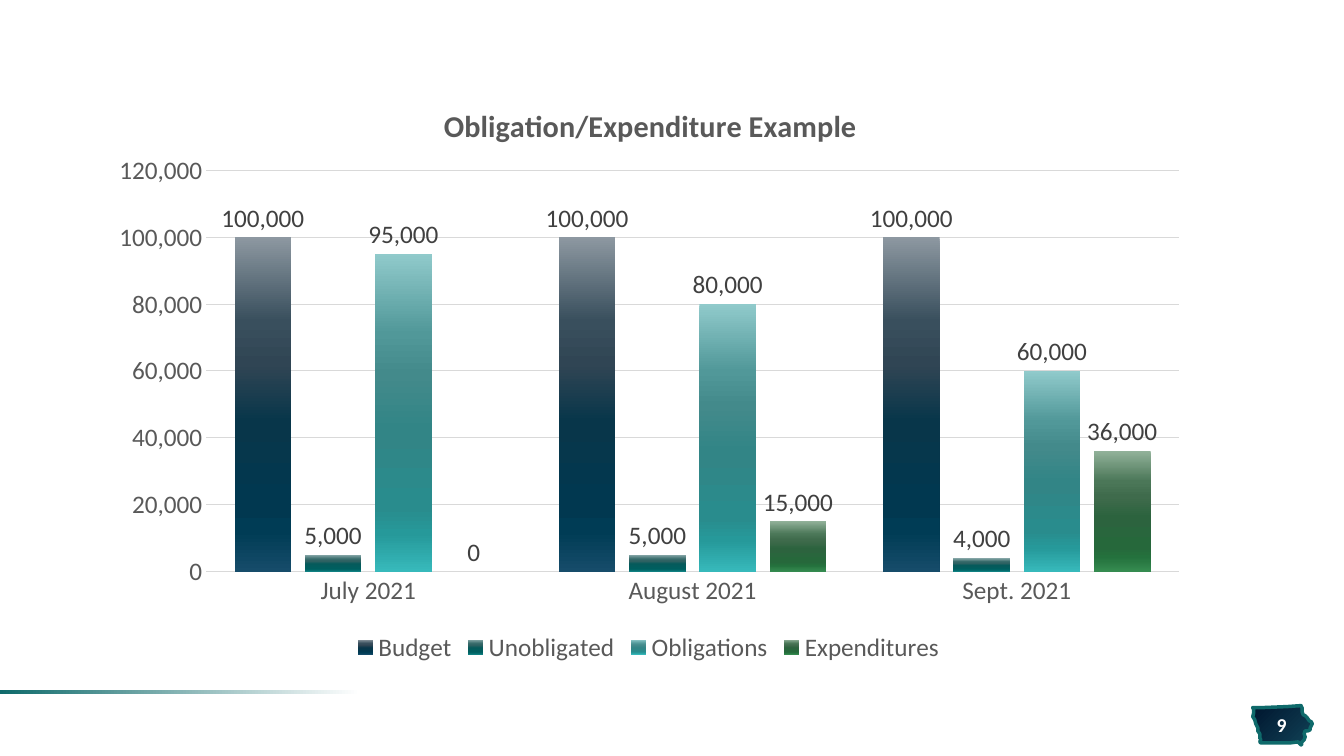
import pptx
import pptx.chart.data
import pptx.dml.color
import pptx.enum.chart
import pptx.enum.shapes
import pptx.enum.text
import pptx.oxml
import pptx.oxml.ns
import pptx.util
from lxml import etree

Cm, Pt = pptx.util.Cm, pptx.util.Pt
qn = pptx.oxml.ns.qn

FONT = "Calibri"
TITLE = "Obligation/Expenditure Example"
MONTHS = ["July 2021", "August 2021", "Sept. 2021"]
STOP_POSITIONS = (0, 25, 38, 55, 80, 88, 100)
SERIES = [
    ("Budget", (100000, 100000, 100000),
     "8D98A1 394F5D 304554 08364A 013850 003C55 164C6A"),
    ("Unobligated", (5000, 5000, 4000),
     "8BAAAB 396C6C 2E6162 055A5B 005E5F 006364 108182"),
    ("Obligations", (95000, 80000, 60000),
     "90CACB 519899 438A8B 328586 298C8D 26999A 37B9BB"),
    ("Expenditures", (0, 15000, 36000),
     "91B199 4B7758 3F6B4C 2C633E 26683B 24713D 358B50"),
]
PAGE_NUMBER = "9"
TEAL, AXIS_TEXT, LABEL_TEXT, GRID = "0F6A6B", "595959", "404040", "D9D9D9"

# State outline, in hundredths of an inch from its top left corner
STATE_LEFT, STATE_TOP = Cm(31.57), Cm(17.78)
STATE_OUTLINE = [
    (48, 0), (34, 1), (10, 2), (0, 2), (1, 4), (1, 7), (0, 11), (2, 14),
    (3, 18), (5, 22), (5, 25), (7, 28), (7, 32), (8, 34), (7, 36), (8, 37),
    (37, 37), (45, 36), (48, 39), (49, 38), (48, 37), (51, 34), (52, 31),
    (51, 28), (52, 25), (55, 25), (57, 24), (57, 22), (59, 18), (58, 16),
    (56, 15), (54, 12), (52, 10), (50, 9), (49, 6), (49, 2), (48, 1),
]


def rgb(value):
    return pptx.dml.color.RGBColor.from_string(value)


def style_font(font, size=18, color=AXIS_TEXT, bold=False):
    font.name, font.size, font.bold = FONT, Pt(size), bold
    font.color.rgb = rgb(color)


def put_text(frame, text, align=pptx.enum.text.PP_ALIGN.CENTER, spacing=None, **look):
    paragraph = frame.paragraphs[0]
    paragraph.alignment = align
    run = paragraph.add_run()
    run.text = text
    style_font(run.font, **look)
    if spacing:
        run.font._element.set("spc", str(round(spacing * 100)))


def fill_gradient(fill, element, stops, angle):
    """Fill with (percent, colour) stops; angle runs clockwise in degrees."""
    fill.gradient()
    gradient = element.find(".//" + qn("a:gradFill"))
    stop_list = gradient.find(qn("a:gsLst"))
    for stop in list(stop_list):
        stop_list.remove(stop)
    for percent, color in stops:
        stop = etree.SubElement(stop_list, qn("a:gs"), pos=str(percent * 1000))
        etree.SubElement(stop, qn("a:srgbClr"), val=color)
    gradient.find(qn("a:lin")).set("ang", str(angle * 60000))


def place(part, before, inner=False, **fractions):
    """Lay a chart part out by fractions of the chart, ahead of the first of the given tags."""
    for old in part.findall(qn("c:layout")):
        part.remove(old)
    layout = etree.Element(qn("c:layout"))
    manual = etree.SubElement(layout, qn("c:manualLayout"))
    if inner:
        etree.SubElement(manual, qn("c:layoutTarget"), val="inner")
    for key in ("x", "y"):
        etree.SubElement(manual, qn(f"c:{key}Mode"), val="edge")
    for key, value in fractions.items():
        etree.SubElement(manual, qn(f"c:{key}"), val=str(value))
    next(child for child in part if child.tag in map(qn, before)).addprevious(layout)


def add_state(slide):
    builder = slide.shapes.build_freeform(*STATE_OUTLINE[0], scale=Cm(2.54) / 100)
    builder.add_line_segments(STATE_OUTLINE[1:], close=True)
    state = builder.convert_to_shape(STATE_LEFT, STATE_TOP)
    state.shadow.inherit = False
    fill_gradient(state.fill, state._element, [(0, "00162E"), (100, "114257")], 45)
    state.line.color.rgb = rgb(TEAL)
    state.line.width = Pt(2.5)


def add_footer_rule(slide):
    rule = slide.shapes.add_shape(pptx.enum.shapes.MSO_SHAPE.RECTANGLE,
                                  0, Cm(17.4), Cm(9.65), Cm(0.08))
    rule.shadow.inherit = False
    rule.line.fill.background()
    fill_gradient(rule.fill, rule._element, [(6, "FFFFFF"), (100, TEAL)], 180)


def add_page_number(slide):
    frame = slide.shapes.add_textbox(Cm(31.65), Cm(17.98), Cm(1.3), Cm(0.58)).text_frame
    frame.word_wrap = True
    frame.margin_left = frame.margin_right = 0
    frame.vertical_anchor = pptx.enum.text.MSO_ANCHOR.MIDDLE
    put_text(frame, PAGE_NUMBER, size=14, color="FFFFFF", bold=True, spacing=0.5)


def style_axes(chart):
    months, amounts = chart.category_axis, chart.value_axis
    for axis in (months, amounts):
        axis.major_tick_mark = axis.minor_tick_mark = pptx.enum.chart.XL_TICK_MARK.NONE
        style_font(axis.tick_labels.font)
    months.format.line.color.rgb = rgb(GRID)
    months.format.line.width = Pt(1)
    amounts.format.line.fill.background()
    amounts.minimum_scale, amounts.maximum_scale, amounts.major_unit = 0, 120000, 20000
    amounts.tick_labels.number_format = "#,##0"
    amounts.tick_labels.number_format_is_linked = False
    amounts.major_gridlines.format.line.color.rgb = rgb(GRID)
    amounts.major_gridlines.format.line.width = Pt(0.75)


def add_obligation_chart(slide):
    budget_data = pptx.chart.data.CategoryChartData(number_format="#,##0")
    budget_data.categories = MONTHS
    for name, values, _ in SERIES:
        budget_data.add_series(name, values)
    chart = slide.shapes.add_chart(
        pptx.enum.chart.XL_CHART_TYPE.COLUMN_CLUSTERED,
        Cm(2.41), Cm(1.73), Cm(27.86), Cm(15.09), budget_data).chart
    style_font(chart.font, color="000000")

    put_text(chart.chart_title.text_frame, TITLE, size=21.6, bold=True)
    chart.chart_title.include_in_layout = False
    place(chart.chart_title._element, ["c:overlay"], x=0.31, y=0.05)
    plot_area = chart._chartSpace.find(".//" + qn("c:plotArea"))
    place(plot_area, ["c:barChart"], inner=True, x=0.1, y=0.17, w=0.88, h=0.67)

    chart.has_legend = True
    chart.legend.position = pptx.enum.chart.XL_LEGEND_POSITION.BOTTOM
    chart.legend.include_in_layout = False
    style_font(chart.legend.font)
    style_axes(chart)

    plot = chart.plots[0]
    plot.vary_by_categories = False
    plot.gap_width, plot.overlap = 100, -24
    for series, (_, _, colors) in zip(plot.series, SERIES):
        fill_gradient(series.format.fill, series._element,
                      zip(STOP_POSITIONS, colors.split()), 90)
        labels = series.data_labels
        labels.show_value = True
        labels.position = pptx.enum.chart.XL_LABEL_POSITION.OUTSIDE_END
        labels.number_format, labels.number_format_is_linked = "#,##0", False
        style_font(labels.font, color=LABEL_TEXT)


def main():
    deck = pptx.Presentation()
    deck.slide_width, deck.slide_height = Cm(33.87), Cm(19.05)
    slide = deck.slides.add_slide(deck.slide_layouts[6])
    add_state(slide)
    add_footer_rule(slide)
    add_page_number(slide)
    add_obligation_chart(slide)
    deck.save("out.pptx")


if __name__ == "__main__":
    main()
